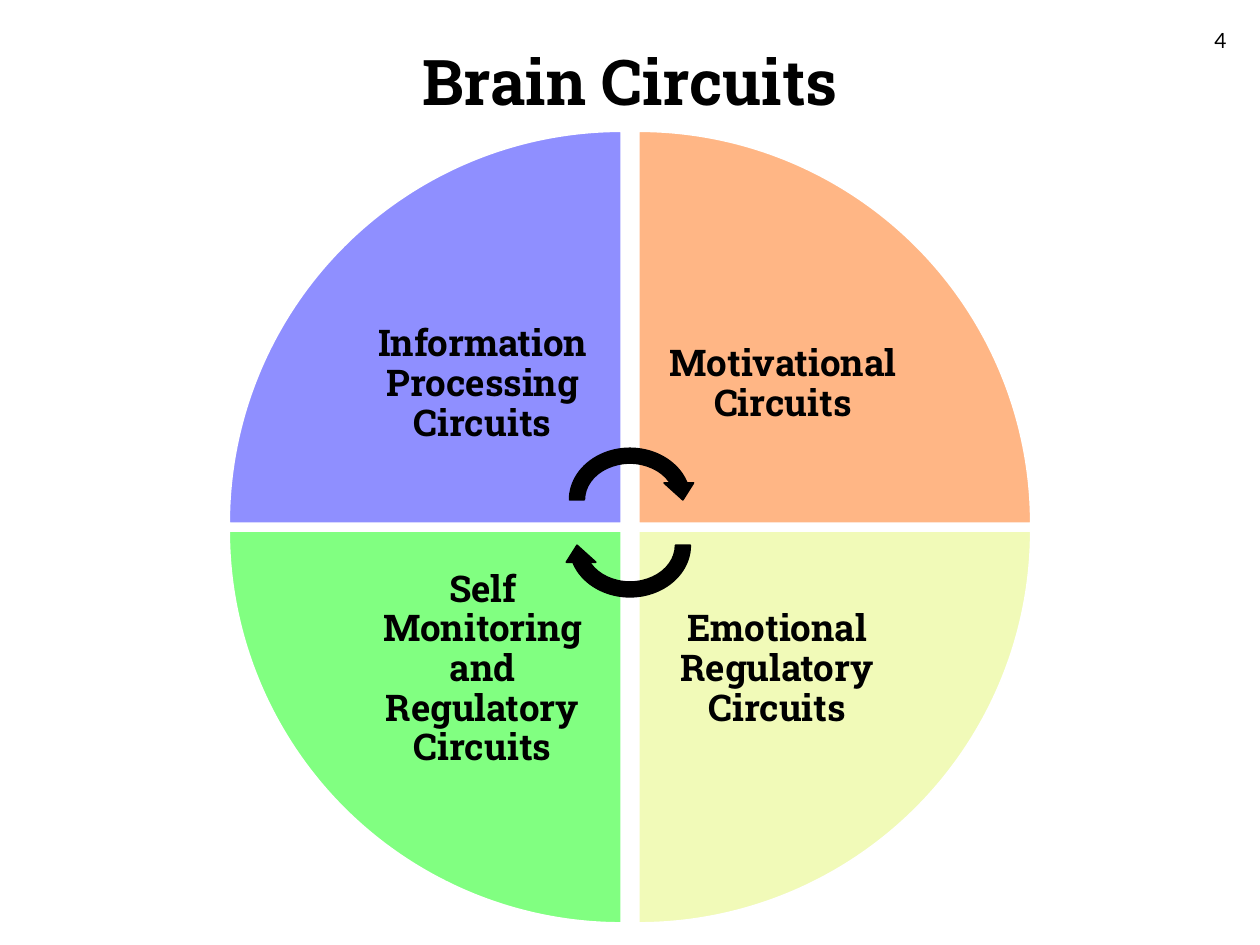
from pptx import Presentation
from pptx.dml.color import RGBColor
from pptx.enum.shapes import MSO_SHAPE
from pptx.enum.text import MSO_ANCHOR, MSO_AUTO_SIZE, PP_ALIGN
from pptx.util import Pt


def color(code):
    return RGBColor.from_string(code)


class Deck:
    head = "Roboto Slab"
    small = "Lato"
    ink = "000000"
    edge = "FFFFFF"

    def __init__(self, wide, high):
        self.file = Presentation()
        self.file.slide_width = Pt(wide)
        self.file.slide_height = Pt(high)
        self.slide = self.file.slides.add_slide(self.file.slide_layouts[5])

    def letter(self, box, text, size, face, bold, align):
        frame = box.text_frame
        frame.text = text
        frame.word_wrap = True
        para = frame.paragraphs[0]
        para.alignment = align
        para.font.size = Pt(size)
        para.font.name = face
        para.font.bold = bold
        para.font.color.rgb = color(self.ink)
        return frame

    def title(self, text, left, top, wide, high):
        box = self.slide.shapes.title
        box.left, box.top, box.width, box.height = map(Pt, (left, top, wide, high))
        frame = self.letter(box, text, 36, self.head, True, PP_ALIGN.CENTER)
        frame.auto_size = MSO_AUTO_SIZE.NONE
        frame.vertical_anchor = MSO_ANCHOR.TOP

    def number(self, text, left, top, wide, high):
        box = self.slide.shapes.add_textbox(*map(Pt, (left, top, wide, high)))
        self.letter(box, text, 12, self.small, False, PP_ALIGN.RIGHT)

    def label(self, text, left, top, side, right):
        box = self.slide.shapes.add_textbox(*map(Pt, (left, top, side, side)))
        frame = self.letter(box, text, 21, self.head, True, PP_ALIGN.CENTER)
        frame.vertical_anchor = MSO_ANCHOR.MIDDLE
        frame.margin_left = frame.margin_top = frame.margin_bottom = Pt(11.5)
        frame.margin_right = Pt(right)
        frame.paragraphs[0].line_spacing = 0.9

    def shape(self, kind, left, top, wide, high, turn, fill, line):
        item = self.slide.shapes.add_shape(kind, *map(Pt, (left, top, wide, high)))
        item.rotation = turn
        item.shadow.inherit = False
        item.fill.solid()
        item.fill.fore_color.rgb = color(fill)
        item.line.color.rgb = color(line)
        item.line.width = Pt(1)


def main():
    deck = Deck(720, 540)
    deck.title("Brain Circuits", 0, 20.9, 720, 51)

    left, top, step, side = 131, 75, 234, 224
    drop, area = 228.4, 158.4
    inset = side - area
    parts = [
        ("Information Processing Circuits", "8F8FFF", 0, 0, 11.5),
        ("Motivational Circuits", "FFB685", 1, 0, 5),
        ("Emotional Regulatory Circuits", "F1FAB8", 1, 1, 11.5),
        ("Self Monitoring and Regulatory Circuits", "81FF81", 0, 1, 11.5),
    ]
    for place, (text, fill, col, row, right) in enumerate(parts):
        x, y = left + col * step, top + row * drop
        deck.shape(MSO_SHAPE.PIE_WEDGE, x, y, side, side, place * 90, fill, deck.edge)
        deck.label(text, x + inset * (1 - col), y + inset * (1 - row), area, right)

    for y, turn in ((252, 0), (278, 180)):
        deck.shape(MSO_SHAPE.CIRCULAR_ARROW, 321.3, y, 77.3, 67.2, turn, deck.ink, deck.ink)

    deck.number("4", 648, 12.2, 60, 19.4)
    deck.file.save("out.pptx")


if __name__ == "__main__":
    main()
